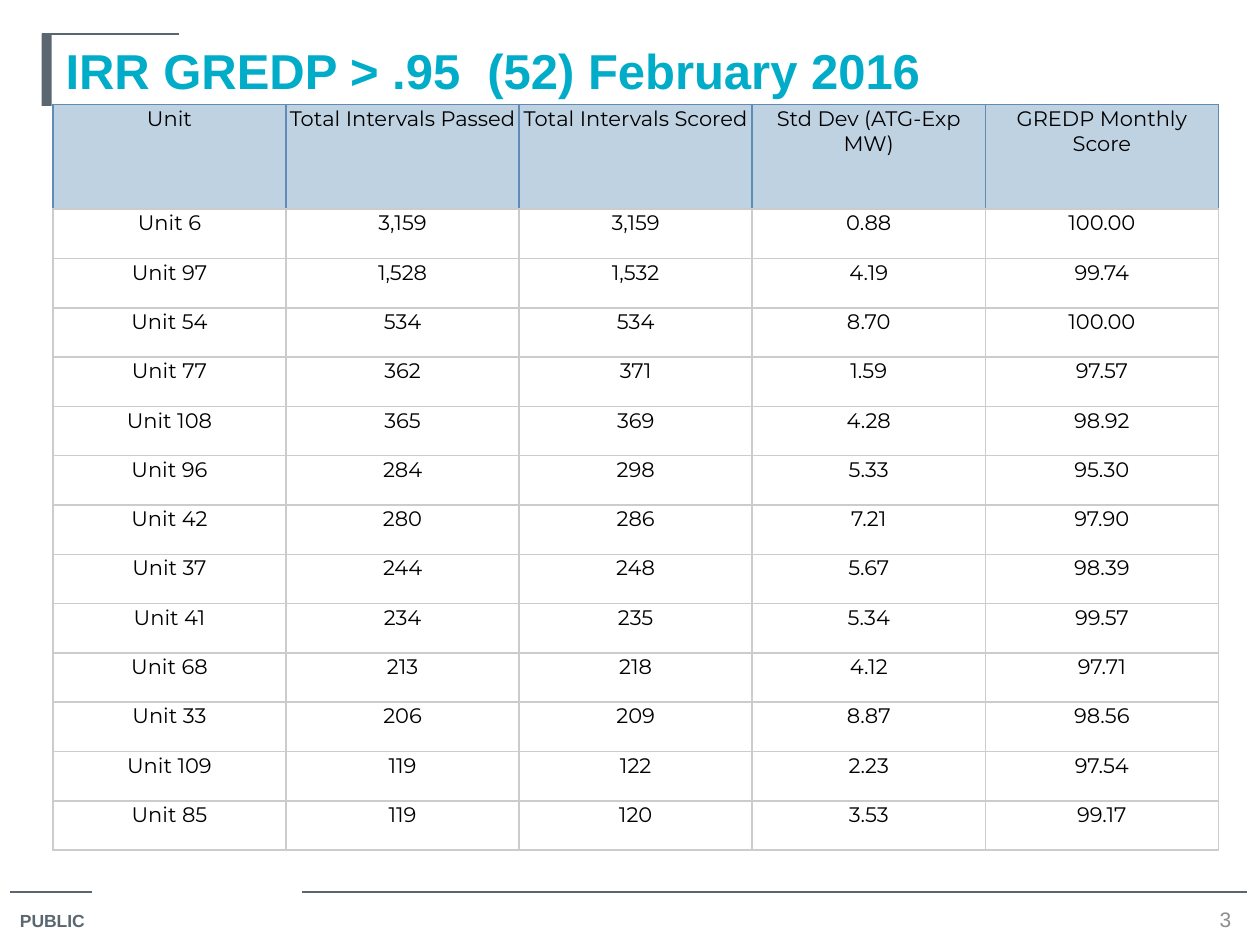
from dataclasses import dataclass
from typing import NamedTuple

from lxml.etree import SubElement
from pptx import Presentation
from pptx.dml.color import RGBColor
from pptx.enum.shapes import MSO_CONNECTOR, MSO_SHAPE
from pptx.enum.text import MSO_ANCHOR, PP_ALIGN
from pptx.oxml.ns import qn
from pptx.util import Inches, Pt


@dataclass(frozen=True)
class Theme:
    title: str = "00ACC8"
    slate: str = "5B6770"
    page: str = "8C8C8C"
    text: str = "000000"
    header_fill: str = "BFD2E2"
    header_border: str = "608BB4"
    body_border: str = "CCCCCC"
    main_font: str = "Arial"
    table_font: str = "Montserrat"
    title_size: float = 28
    body_size: float = 12
    label_size: float = 10
    rule_width: float = 0.75
    border_width: float = 1


class Box(NamedTuple):
    left: float
    top: float
    width: float
    height: float

    def lengths(self):
        return [Inches(value) for value in self]


class Rule(NamedTuple):
    left: float
    right: float
    y: float


class UnitScore(NamedTuple):
    unit: str
    passed: str
    scored: str
    deviation: str
    score: str


THEME = Theme()
RULES = [Rule(0.08, 0.73, 7.08), Rule(2.4, 9.9, 7.08), Rule(0.33, 1.42, 0.27)]
TABLE_BOX = Box(0.42, 0.83, 9.25, 5.92)
HEADER_HEIGHT = 0.83
HEADER = UnitScore(
    "Unit",
    "Total Intervals Passed",
    "Total Intervals Scored",
    "Std Dev (ATG-Exp MW)",
    "GREDP Monthly Score",
)
SCORES = [
    UnitScore("Unit 6", "3,159", "3,159", "0.88", "100.00"),
    UnitScore("Unit 97", "1,528", "1,532", "4.19", "99.74"),
    UnitScore("Unit 54", "534", "534", "8.70", "100.00"),
    UnitScore("Unit 77", "362", "371", "1.59", "97.57"),
    UnitScore("Unit 108", "365", "369", "4.28", "98.92"),
    UnitScore("Unit 96", "284", "298", "5.33", "95.30"),
    UnitScore("Unit 42", "280", "286", "7.21", "97.90"),
    UnitScore("Unit 37", "244", "248", "5.67", "98.39"),
    UnitScore("Unit 41", "234", "235", "5.34", "99.57"),
    UnitScore("Unit 68", "213", "218", "4.12", "97.71"),
    UnitScore("Unit 33", "206", "209", "8.87", "98.56"),
    UnitScore("Unit 109", "119", "122", "2.23", "97.54"),
    UnitScore("Unit 85", "119", "120", "3.53", "99.17"),
]


def write(frame, text: str, size: float, color: str, font: str,
          bold: bool = False, align=PP_ALIGN.LEFT) -> None:
    frame.text = text
    paragraph = frame.paragraphs[0]
    paragraph.alignment = align
    run_font = paragraph.runs[0].font
    run_font.size = Pt(size)
    run_font.name = font
    run_font.bold = bold
    run_font.color.rgb = RGBColor.from_string(color)


def draw_rule(slide, rule: Rule) -> None:
    line = slide.shapes.add_connector(
        MSO_CONNECTOR.STRAIGHT,
        Inches(rule.left), Inches(rule.y), Inches(rule.right), Inches(rule.y),
    )
    line.line.color.rgb = RGBColor.from_string(THEME.slate)
    line.line.width = Pt(THEME.rule_width)
    SubElement(line._element.spPr, qn("a:effectLst"))


def draw_accent(slide, box: Box) -> None:
    accent = slide.shapes.add_shape(MSO_SHAPE.RECTANGLE, *box.lengths())
    accent.shadow.inherit = False
    accent.fill.solid()
    accent.fill.fore_color.rgb = RGBColor.from_string(THEME.slate)
    accent.line.fill.background()


def draw_title(slide, box: Box, text: str) -> None:
    title = slide.shapes.title
    title.left, title.top, title.width, title.height = box.lengths()
    write(title.text_frame, text, THEME.title_size, THEME.title, THEME.main_font, bold=True)
    title.text_frame.vertical_anchor = MSO_ANCHOR.TOP


def draw_classification(slide, box: Box, text: str) -> None:
    frame = slide.shapes.add_textbox(*box.lengths()).text_frame
    write(frame, text, THEME.label_size, THEME.slate, THEME.main_font, bold=True)


def draw_page_number(slide, box: Box, text: str) -> None:
    frame = slide.shapes.add_textbox(*box.lengths()).text_frame
    frame.margin_left = frame.margin_right = frame.margin_top = frame.margin_bottom = 0
    frame.vertical_anchor = MSO_ANCHOR.MIDDLE
    write(frame, text, THEME.body_size, THEME.page, THEME.main_font, align=PP_ALIGN.CENTER)


def set_borders(cell, side_color: str) -> None:
    properties = cell._tc.get_or_add_tcPr()
    edges = {"a:lnL": side_color, "a:lnR": side_color,
             "a:lnT": side_color, "a:lnB": THEME.body_border}
    for edge, color in edges.items():
        border = SubElement(properties, qn(edge), w=str(Pt(THEME.border_width)))
        SubElement(SubElement(border, qn("a:solidFill")), qn("a:srgbClr"), val=color)


def fill_cell(cell, text: str, is_header: bool) -> None:
    cell.margin_left = cell.margin_right = cell.margin_top = Inches(0.01)
    cell.margin_bottom = 0
    cell.vertical_anchor = MSO_ANCHOR.TOP
    set_borders(cell, THEME.header_border if is_header else THEME.body_border)
    if is_header:
        cell.fill.solid()
        cell.fill.fore_color.rgb = RGBColor.from_string(THEME.header_fill)
    else:
        cell.fill.background()
    write(cell.text_frame, text, THEME.body_size, THEME.text, THEME.table_font,
          align=PP_ALIGN.CENTER)


def draw_scores(slide, box: Box, header: UnitScore, scores: list[UnitScore]) -> None:
    records = [header, *scores]
    table = slide.shapes.add_table(len(records), len(header), *box.lengths()).table
    table.first_row = False
    table.horz_banding = False
    for column in table.columns:
        column.width = Inches(box.width / len(header))
    body_height = (box.height - HEADER_HEIGHT) / len(scores)
    for index, record in enumerate(records):
        is_header = index == 0
        table.rows[index].height = Inches(HEADER_HEIGHT if is_header else body_height)
        for cell, text in zip(table.rows[index].cells, record):
            fill_cell(cell, text, is_header)


def main() -> None:
    deck = Presentation()
    deck.slide_width = Inches(10)
    deck.slide_height = Inches(7.5)
    slide = deck.slides.add_slide(deck.slide_layouts[5])
    for rule in RULES:
        draw_rule(slide, rule)
    draw_accent(slide, Box(0.33, 0.27, 0.08, 0.57))
    draw_classification(slide, Box(0.06, 7.17, 0.77, 0.28), "PUBLIC")
    draw_page_number(slide, Box(9.6, 7.18, 0.25, 0.23), "3")
    draw_title(slide, Box(0.42, 0.27, 9.25, 0.73), "IRR GREDP > .95  (52) February 2016")
    draw_scores(slide, TABLE_BOX, HEADER, SCORES)
    deck.save("out.pptx")


if __name__ == "__main__":
    main()
